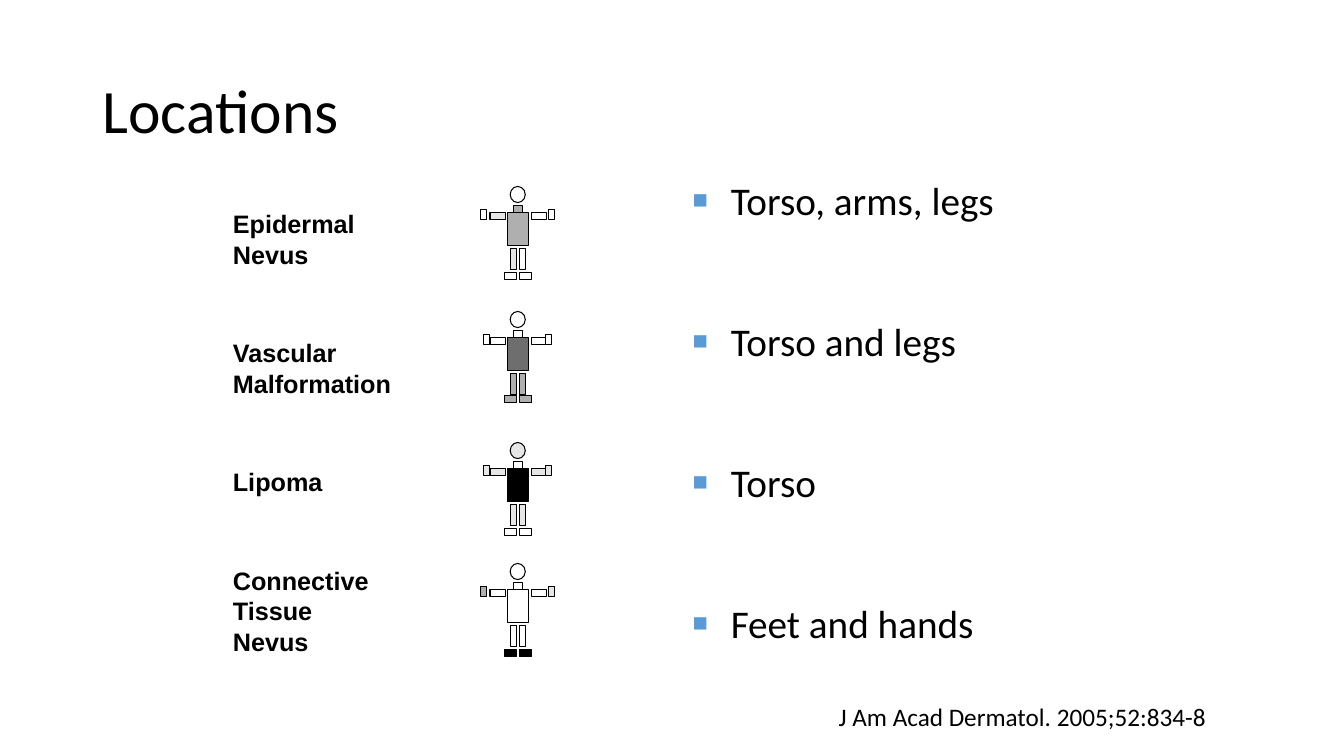
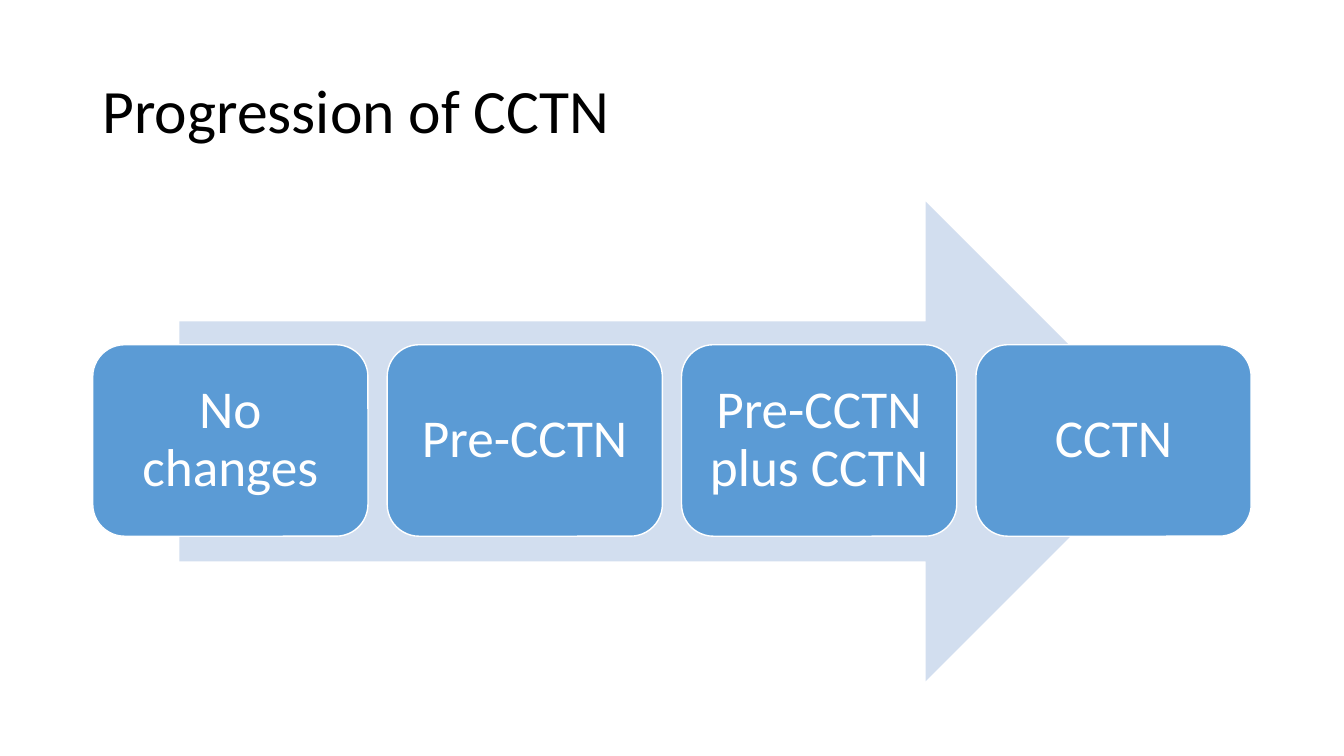
"""Build two slides: lesion locations and the progression of CCTN."""
from dataclasses import dataclass

from lxml.etree import SubElement
from pptx import Presentation
from pptx.dml.color import RGBColor
from pptx.enum.shapes import MSO_SHAPE as Shape
from pptx.enum.text import MSO_ANCHOR as Anchor, PP_ALIGN as Align
from pptx.oxml.ns import qn
from pptx.util import Pt

EMU_PER_PX = 9144


@dataclass(frozen=True)
class Theme:
    font: str = "Calibri"
    label_font: str = "Arial"
    black: str = "000000"
    white: str = "FFFFFF"
    accent: str = "5B9BD5"
    pale: str = "D2DEEF"
    title_size: int = 44
    step_size: int = 38
    bullet_size: int = 28
    small_size: int = 18


THEME = Theme()
SLIDE_SIZE = (1333, 750)
TITLE_BOX = (92, 40, 1150, 145)

SHADES = {"white": "FFFFFF", "light": "E6E6E6", "medium": "AFAFAF",
          "dark": "6E6E6E", "black": "000000"}

FIGURE_PARTS = {
    "head": (506, -26, 15, 16),
    "neck": (509, -7, 9, 7),
    "torso": (503, 0, 21, 33),
    "left arm": (486, 0, 15, 7),
    "right arm": (527, 0, 15, 7),
    "left hand": (477, -3, 6, 10),
    "right hand": (544, -3, 6, 10),
    "left leg": (506, 36, 6, 20),
    "right leg": (515, 36, 6, 20),
    "left foot": (500, 59, 12, 7),
    "right foot": (515, 59, 12, 7),
}

LESIONS = [
    {"label": "Epidermal Nevus", "label_box": (228, 205, 142, 64),
     "location": "Torso, arms, legs", "torso_top": 211,
     "shades": {"torso": "medium", "neck": "medium",
                "left arm": "light", "left leg": "light"}},
    {"label": "Vascular Malformation", "label_box": (228, 333, 167, 64),
     "location": "Torso and legs", "torso_top": 335,
     "hand_shift": 3, "foot_shift": -2,
     "shades": {"torso": "dark", "leg": "medium", "foot": "medium"}},
    {"label": "Lipoma", "label_box": (228, 461, 108, 34),
     "location": "Torso", "torso_top": 465, "hand_shift": 3,
     "shades": {"torso": "black", "head": "light", "arm": "light",
                "hand": "light", "leg": "light"}},
    {"label": "Connective Tissue Nevus", "label_box": (228, 559, 158, 94),
     "location": "Feet and hands", "torso_top": 585,
     "shades": {"left hand": "medium", "right hand": "light",
                "foot": "black"}},
]
LOCATIONS_BOX = (677, 170, 425, 494)
LOCATION_GAP = 67
BULLET_INDENT = 38
CITATION = "J Am Acad Dermatol. 2005;52:834-8"
CITATION_BOX = (822, 691, 496, 40)

STEPS = ["No changes", "Pre-CCTN", "Pre-CCTN plus CCTN", "CCTN"]
ARROW_BOX = (178, 200, 978, 476)
FIRST_STEP_BOX = (92, 342, 273, 190)
STEP_PITCH = 292


def px(value):
    return round(value * EMU_PER_PX)


def color(value):
    return RGBColor.from_string(value)


def write(shape, lines, size, font=THEME.font, ink=THEME.black, bold=False,
          align=Align.LEFT, anchor=Anchor.TOP, spacing=1.0, gap=0,
          insets=(10, 5)):
    frame = shape.text_frame
    frame.word_wrap = True
    frame.vertical_anchor = anchor
    frame.margin_left = frame.margin_right = px(insets[0])
    frame.margin_top = frame.margin_bottom = px(insets[1])
    for index, line in enumerate(lines):
        paragraph = frame.add_paragraph() if index else frame.paragraphs[0]
        paragraph.alignment = align
        paragraph.line_spacing = spacing
        paragraph.space_before = Pt(gap if index else 0)
        run = paragraph.add_run()
        run.text = line
        run.font.name = font
        run.font.size = Pt(size)
        run.font.bold = bold
        run.font.color.rgb = color(ink)
    return frame


def add_text(slide, box, lines, **text_format):
    return write(slide.shapes.add_textbox(*map(px, box)), lines, **text_format)


def add_block(slide, kind, box, fill, line=None, line_width=0.75):
    shape = slide.shapes.add_shape(kind, *map(px, box))
    shape.shadow.inherit = False
    shape.fill.solid()
    shape.fill.fore_color.rgb = color(fill)
    if line:
        shape.line.color.rgb = color(line)
        shape.line.width = Pt(line_width)
    else:
        shape.line.fill.background()
    return shape


def add_bullet(paragraph):
    properties = paragraph._p.get_or_add_pPr()
    properties.set("marL", str(px(BULLET_INDENT)))
    properties.set("indent", str(-px(BULLET_INDENT)))
    bullet_color = SubElement(properties, qn("a:buClr"))
    SubElement(bullet_color, qn("a:srgbClr"), val=THEME.accent)
    SubElement(properties, qn("a:buSzPct"), val="65000")
    SubElement(properties, qn("a:buFont"), typeface=THEME.label_font)
    SubElement(properties, qn("a:buChar"), char="■")


def add_titled_slide(presentation, title):
    slide = presentation.slides.add_slide(presentation.slide_layouts[6])
    add_text(slide, TITLE_BOX, [title], size=THEME.title_size,
             anchor=Anchor.MIDDLE, spacing=0.9)
    return slide


def add_figure(slide, lesion):
    shades = lesion["shades"]
    hand_shift = lesion.get("hand_shift", 0)
    for part, (left, top, width, height) in FIGURE_PARTS.items():
        limb = part.split()[-1]
        if limb == "hand":
            left += hand_shift if part.startswith("left") else -hand_shift
        if limb == "foot":
            top += lesion.get("foot_shift", 0)
        shade = shades.get(part, shades.get(limb, "white"))
        kind = Shape.OVAL if part == "head" else Shape.RECTANGLE
        add_block(slide, kind, (left, lesion["torso_top"] + top, width, height),
                  SHADES[shade], THEME.black)


def build_locations(presentation):
    slide = add_titled_slide(presentation, "Locations")
    for lesion in LESIONS:
        add_figure(slide, lesion)
        add_text(slide, lesion["label_box"], [lesion["label"]], bold=True,
                 size=THEME.small_size, font=THEME.label_font, insets=(3, 2))
    locations = [lesion["location"] for lesion in LESIONS]
    frame = add_text(slide, LOCATIONS_BOX, locations, size=THEME.bullet_size,
                     gap=LOCATION_GAP)
    for paragraph in frame.paragraphs:
        add_bullet(paragraph)
    add_text(slide, CITATION_BOX, [CITATION], size=THEME.small_size)


def build_progression(presentation):
    slide = add_titled_slide(presentation, "Progression of CCTN")
    add_block(slide, Shape.RIGHT_ARROW, ARROW_BOX, THEME.pale)
    left, top, width, height = FIRST_STEP_BOX
    for index, step in enumerate(STEPS):
        box = (left + index * STEP_PITCH, top, width, height)
        block = add_block(slide, Shape.ROUNDED_RECTANGLE, box, THEME.accent,
                          THEME.white, line_width=1)
        write(block, [step], size=THEME.step_size, ink=THEME.white,
              align=Align.CENTER, anchor=Anchor.MIDDLE, spacing=0.9,
              insets=(16, 16))


def main():
    presentation = Presentation()
    presentation.slide_width, presentation.slide_height = map(px, SLIDE_SIZE)
    build_locations(presentation)
    build_progression(presentation)
    presentation.save("out.pptx")


if __name__ == "__main__":
    main()
